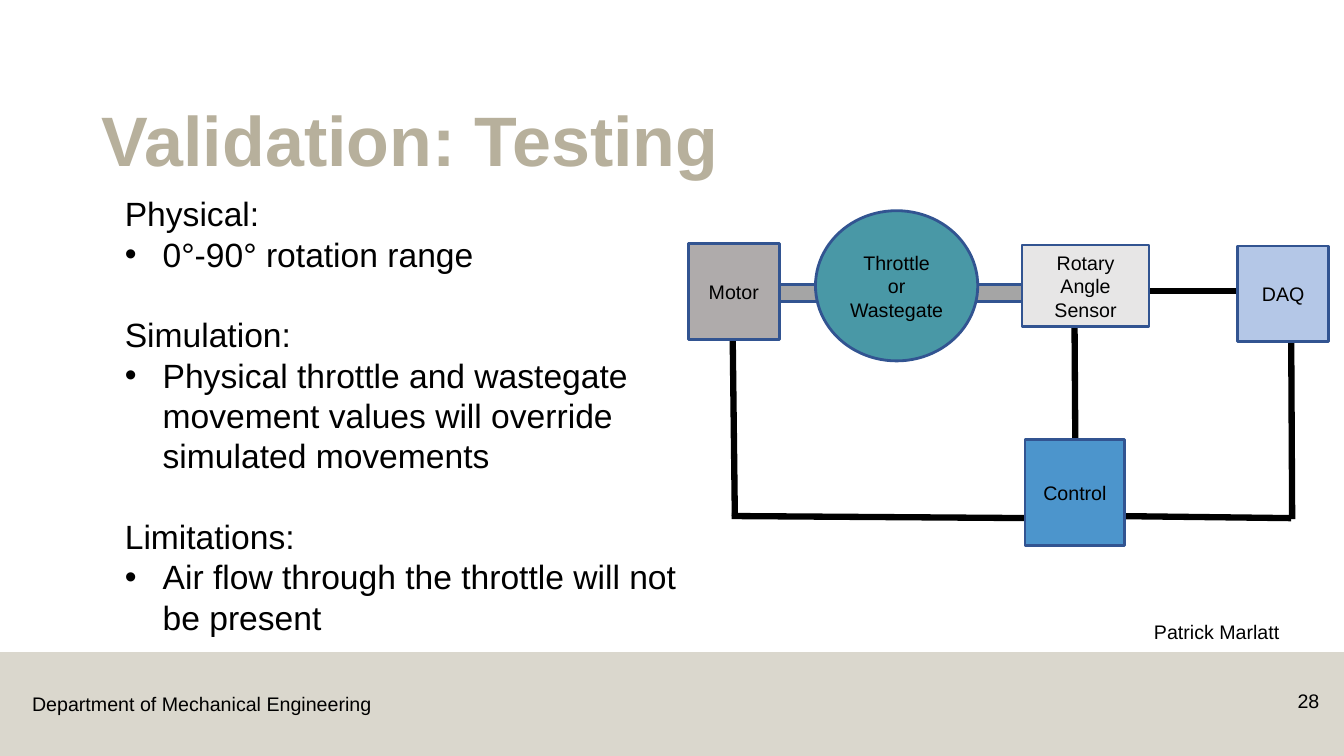
"""Build the "Validation: Testing" slide with its test rig diagram."""
import pptx
import pptx.dml.color
import pptx.enum.shapes
import pptx.enum.text
import pptx.oxml
import pptx.oxml.ns
import pptx.util

Pt = pptx.util.Pt
SHAPES = pptx.enum.shapes.MSO_SHAPE
ALIGN = pptx.enum.text.PP_ALIGN
ANCHOR = pptx.enum.text.MSO_ANCHOR

COLOURS = {
    "sand": "B7B09C", "ink": "000000", "outline": "325491", "rod": "A5A5A5",
    "valve": "4998A6", "motor": "AFABAB", "sensor": "E7E6E6",
    "daq": "B4C7E7", "controller": "4C95CC",
}
FONT = "Arial"
LINE_PITCH = 28.8
BULLET_INDENT = 27

TITLE = "Validation: Testing"
DEPARTMENT = "Department of Mechanical Engineering"
PRESENTER = "Patrick Marlatt"
PAGE = "28"
SECTIONS = [
    ("Physical:", "0°-90° rotation range"),
    ("Simulation:", "Physical throttle and wastegate movement values will override simulated movements"),
    ("Limitations:", "Air flow through the throttle will not be present"),
]

RODS = [(681.8, 203, 61.9, 12.2), (556.6, 203, 64.8, 12.2)]
WIRES = [
    ((767.5, 223.9), (768.2, 331.9)),
    ((922.3, 239), (923, 370.8)),
    ((922.3, 370.1), (796.3, 368.6)),
    ((738.7, 370.1), (522.7, 368.6)),
    ((523.4, 243.4), (524.9, 368.6)),
    ((799.9, 208.1), (900, 208.1)),
]
PARTS = [
    (["Throttle", "or Wastegate"], "valve", SHAPES.OVAL, (582.5, 150.5, 115.9, 107.3)),
    (["Motor"], "motor", SHAPES.RECTANGLE, (491.8, 174.2, 64.8, 68.4)),
    (["Rotary Angle Sensor"], "sensor", SHAPES.RECTANGLE, (730.1, 175, 90.7, 58.3)),
    (["DAQ"], "daq", SHAPES.RECTANGLE, (884.2, 175.7, 64.8, 68.4)),
    (["Control"], "controller", SHAPES.RECTANGLE, (732.2, 313.9, 71.3, 75.6)),
]


def rgb(name):
    return pptx.dml.color.RGBColor.from_string(COLOURS[name])


def write(frame, lines, size=14, colour="ink", bold=False, align=ALIGN.LEFT, anchor=ANCHOR.TOP):
    frame.word_wrap = True
    frame.auto_size = pptx.enum.text.MSO_AUTO_SIZE.NONE
    frame.vertical_anchor = anchor
    for index, line in enumerate(lines):
        paragraph = frame.paragraphs[0] if index == 0 else frame.add_paragraph()
        paragraph.alignment = align
        run = paragraph.add_run()
        run.text = line
        run.font.name = FONT
        run.font.size = Pt(size)
        run.font.bold = bold
        run.font.color.rgb = rgb(colour)
    return frame.paragraphs


def add_text(slide, box, lines, **style):
    return write(slide.shapes.add_textbox(*map(Pt, box)).text_frame, lines, **style)


def add_block(slide, kind, box, fill, outline=None):
    block = slide.shapes.add_shape(kind, *map(Pt, box))
    block.shadow.inherit = False
    block.fill.solid()
    block.fill.fore_color.rgb = rgb(fill)
    if outline:
        block.line.color.rgb = rgb(outline)
        block.line.width = Pt(2)
    else:
        block.line.fill.background()
    return block


def add_wire(slide, start, end):
    wire = slide.shapes.add_connector(
        pptx.enum.shapes.MSO_CONNECTOR.STRAIGHT, *map(Pt, start + end))
    wire.line.color.rgb = rgb("ink")
    wire.line.width = Pt(4.5)
    properties = wire.element.find(pptx.oxml.ns.qn("p:spPr"))
    properties.append(pptx.oxml.parse_xml(f'<a:effectLst {pptx.oxml.ns.nsdecls("a")}/>'))


def add_bullet(paragraph):
    properties = paragraph._p.get_or_add_pPr()
    properties.set("marL", str(Pt(BULLET_INDENT)))
    properties.set("indent", str(-Pt(BULLET_INDENT)))
    for element in ('buFont {} typeface="Arial"', 'buChar {} char="•"'):
        properties.append(pptx.oxml.parse_xml(
            f'<a:{element.format(pptx.oxml.ns.nsdecls("a"))}/>'))


def main():
    deck = pptx.Presentation()
    deck.slide_width, deck.slide_height = Pt(960), Pt(540)
    slide = deck.slides.add_slide(deck.slide_layouts[5])

    title = slide.shapes.title
    title.left, title.top, title.width, title.height = map(Pt, (65.5, 54, 828, 79.2))
    heading = write(title.text_frame, [TITLE], size=50, colour="sand", bold=True,
                    anchor=ANCHOR.BOTTOM)
    heading[0].line_spacing = 0.9

    footer = add_block(slide, SHAPES.RECTANGLE, (0, 465.8, 960, 74.2), "sand")
    tint = footer.element.find(".//" + pptx.oxml.ns.qn("a:srgbClr"))
    tint.append(pptx.oxml.parse_xml(
        f'<a:alpha {pptx.oxml.ns.nsdecls("a")} val="50000"/>'))
    add_text(slide, (15.8, 491, 258.5, 24.5), [DEPARTMENT])
    add_text(slide, (894.2, 488.9, 55.4, 28.8), [PAGE], align=ALIGN.RIGHT)
    add_text(slide, (817.2, 439.2, 142.8, 24.5), [PRESENTER])

    lines = [line for section in SECTIONS for line in section]
    paragraphs = add_text(slide, (82.1, 134.6, 426.2, 328), lines, size=24)
    for index, paragraph in enumerate(paragraphs):
        paragraph.line_spacing = Pt(LINE_PITCH)
        if index % 2:
            add_bullet(paragraph)
        elif index:
            paragraph.space_before = Pt(LINE_PITCH)

    for box in RODS:
        add_block(slide, SHAPES.RECTANGLE, box, "rod", "outline")
    for start, end in WIRES:
        add_wire(slide, start, end)
    for label, fill, kind, box in PARTS:
        part = add_block(slide, kind, box, fill, "outline")
        write(part.text_frame, label, align=ALIGN.CENTER, anchor=ANCHOR.MIDDLE)

    deck.save("out.pptx")


if __name__ == "__main__":
    main()
